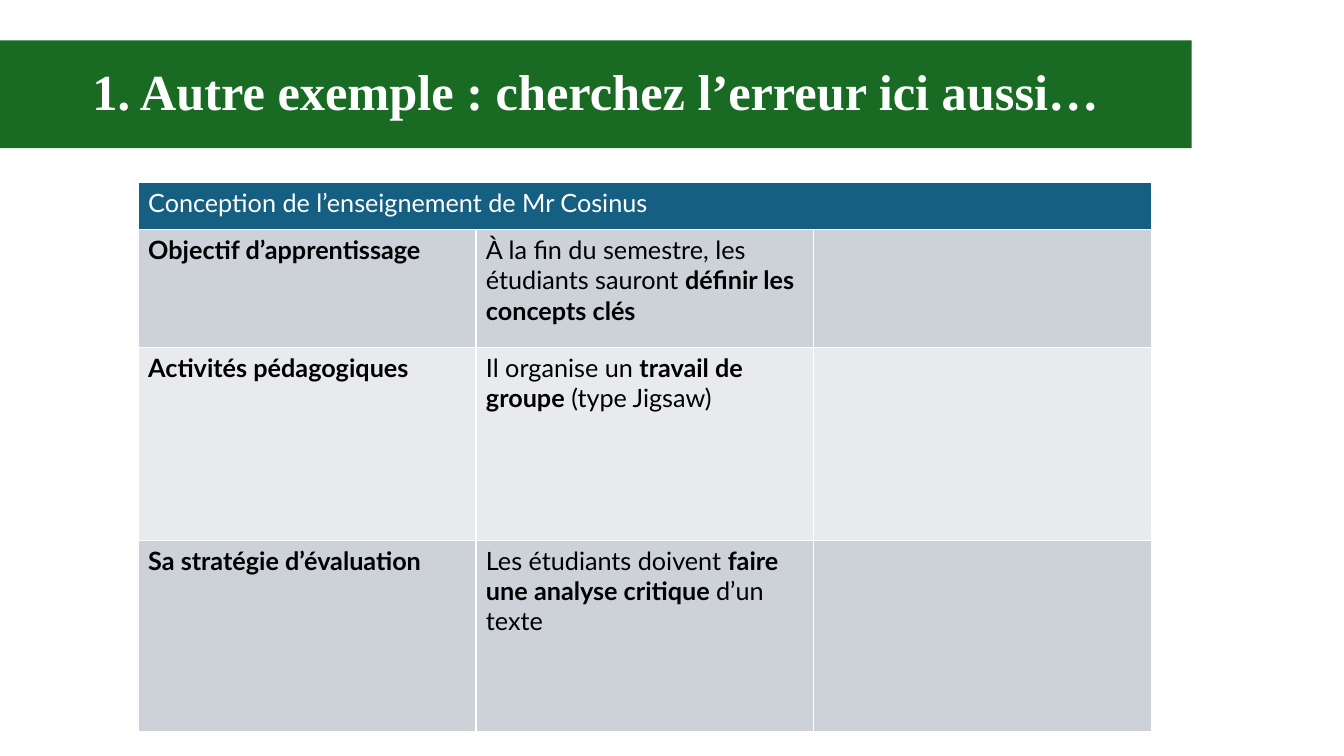
from pptx import Presentation
from pptx.dml.color import RGBColor
from pptx.enum.text import MSO_ANCHOR, MSO_AUTO_SIZE, PP_ALIGN
from pptx.util import Inches, Pt

COLORS = {
    "banner": "196B24",
    "header": "156082",
    "odd_row": "CCD2D8",
    "even_row": "E8EAED",
    "light": "FFFFFF",
    "dark": "000000",
}
COLUMN_WIDTH = 3.35
COLUMN_COUNT = 3
ROW_HEIGHTS = [0.47, 1.17, 1.91, 1.9]
HEADING = "Conception de l’enseignement de Mr Cosinus"
COURSE_DESIGN = [
    ("Objectif d’apprentissage",
     [("À la fin du semestre, les étudiants sauront ", False),
      ("définir les concepts clés", True)]),
    ("Activités pédagogiques",
     [("Il organise un ", False), ("travail de groupe", True),
      (" (type Jigsaw)", False)]),
    ("Sa stratégie d’évaluation",
     [("Les étudiants doivent ", False),
      ("faire une analyse critique ", True), ("d’un texte", False)]),
]


def paint(target, color):
    target.fill.solid()
    target.fill.fore_color.rgb = RGBColor.from_string(COLORS[color])


def write(frame, pieces, size=18, font="Lato", color="dark",
          align=PP_ALIGN.LEFT, spacing=1.0):
    paragraph = frame.paragraphs[0]
    paragraph.alignment = align
    paragraph.line_spacing = spacing
    for words, bold in pieces:
        run = paragraph.add_run()
        run.text = words
        run.font.size = Pt(size)
        run.font.name = font
        run.font.bold = bold
        run.font.color.rgb = RGBColor.from_string(COLORS[color])


def add_banner(slide, words):
    banner = slide.shapes.title
    banner.left, banner.top = Inches(0), Inches(0.4)
    banner.width, banner.height = Inches(11.82), Inches(1.07)
    paint(banner, "banner")
    frame = banner.text_frame
    frame.auto_size = MSO_AUTO_SIZE.NONE
    frame.word_wrap = True
    frame.vertical_anchor = MSO_ANCHOR.MIDDLE
    write(frame, [(words, True)], size=36, font="Times New Roman",
          color="light", align=PP_ALIGN.CENTER, spacing=0.9)


def add_design_table(slide):
    table = slide.shapes.add_table(
        len(ROW_HEIGHTS), COLUMN_COUNT, Inches(1.37), Inches(1.81),
        Inches(COLUMN_WIDTH * COLUMN_COUNT), Inches(sum(ROW_HEIGHTS))).table
    for column in table.columns:
        column.width = Inches(COLUMN_WIDTH)
    for index, (row, height) in enumerate(zip(table.rows, ROW_HEIGHTS)):
        row.height = Inches(height)
        band = "odd_row" if index % 2 else "even_row"
        for cell in row.cells:
            paint(cell, band if index else "header")

    header = table.cell(0, 0)
    header.merge(table.cell(0, COLUMN_COUNT - 1))
    write(header.text_frame, [(HEADING, False)], color="light")
    for index, (step, description) in enumerate(COURSE_DESIGN, start=1):
        write(table.cell(index, 0).text_frame, [(step, True)])
        write(table.cell(index, 1).text_frame, description)


def main():
    deck = Presentation()
    deck.slide_width, deck.slide_height = Inches(13.33), Inches(7.5)
    slide = deck.slides.add_slide(deck.slide_layouts[5])
    add_banner(slide, "1. Autre exemple : cherchez l’erreur ici aussi…")
    add_design_table(slide)
    deck.save("out.pptx")


if __name__ == "__main__":
    main()
